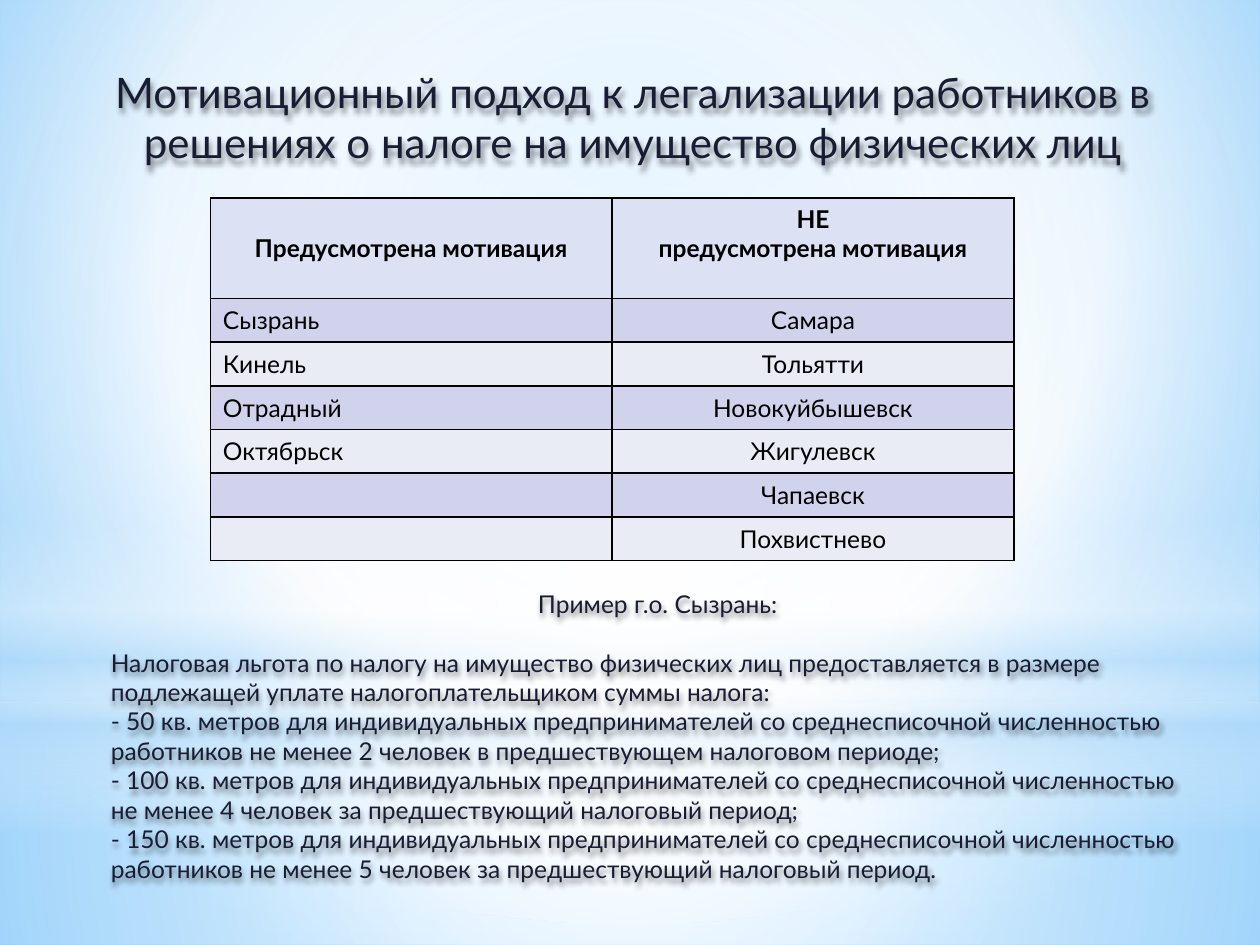
from itertools import zip_longest

from lxml.etree import SubElement
from pptx import Presentation
from pptx.dml.color import RGBColor
from pptx.enum.shapes import MSO_SHAPE
from pptx.enum.text import MSO_ANCHOR, MSO_AUTO_SIZE, PP_ALIGN
from pptx.oxml.ns import qn
from pptx.util import Cm, Pt

HUES = {
    "ink": "191D34", "black": "000000", "white": "FFFFFF",
    "head": "DCE1F4", "odd": "D0D3EB", "even": "E9EBF5",
    "sky": "9ED5FF", "deep": "5BB9FF", "pale": "B4DCFA",
}
FONT = "Lato"
WIDE, HIGH, SPLIT = 25.4, 19.05, 14.17
MID = (50, 50, 50, 50)
BACK = [(0, "sky", 100), (60, "white", 100), (100, "deep", 100)]
GLOWS = [
    (MSO_SHAPE.RECTANGLE, (0, SPLIT, WIDE, HIGH - SPLIT), MID,
     [(0, "white", 91), (37, "white", 76), (100, "pale", 79)]),
    (MSO_SHAPE.RECTANGLE, (0, 0, WIDE, SPLIT), MID,
     [(0, "white", 89), (48, "white", 62), (100, "pale", 79)]),
    (MSO_SHAPE.RECTANGLE, (0, 10.46, WIDE, 6.35), None,
     [(0, "white", 0), (29, "white", 30), (45, "pale", 40),
      (55, "white", 26), (65, "pale", 60), (100, "white", 0)]),
    (MSO_SHAPE.OVAL, (0, 4.45, WIDE, SPLIT), MID,
     [(0, "white", 100), (56, "white", 0)]),
]
TITLE = ("Мотивационный подход к легализации работников в решениях "
         "о налоге на имущество физических лиц")
HEADS = ["Предусмотрена мотивация", "НЕ\nпредусмотрена мотивация"]
WITH = ["Сызрань", "Кинель", "Отрадный", "Октябрьск"]
NONE = ["Самара", "Тольятти", "Новокуйбышевск", "Жигулевск", "Чапаевск",
        "Похвистнево"]
NOTES = [
    "Пример г.о. Сызрань:",
    "Налоговая льгота по налогу на имущество физических лиц предоставляется "
    "в размере подлежащей уплате налогоплательщиком суммы налога:",
    "- 50 кв. метров для индивидуальных предпринимателей со среднесписочной "
    "численностью работников не менее 2 человек в предшествующем налоговом "
    "периоде;",
    "- 100 кв. метров для индивидуальных предпринимателей со среднесписочной "
    "численностью не менее 4 человек за предшествующий налоговый период;",
    "- 150 кв. метров для индивидуальных предпринимателей со среднесписочной "
    "численностью работников не менее 5 человек за предшествующий налоговый "
    "период.",
]


def tint(node, hue, clear):
    """Add a colour with its opacity in percent to an XML node."""
    color = SubElement(node, qn("a:srgbClr"), val=HUES[hue])
    SubElement(color, qn("a:alpha"), val=str(clear * 1000))


def blend(fill, root, stops, rect):
    """Give a fill a round gradient, or a vertical one when rect is None."""
    fill.gradient()
    grad = root.find(".//" + qn("a:gradFill"))
    for child in list(grad):
        grad.remove(child)
    row = SubElement(grad, qn("a:gsLst"))
    for place, hue, clear in stops:
        tint(SubElement(row, qn("a:gs"), pos=str(place * 1000)), hue, clear)
    if rect is None:
        SubElement(grad, qn("a:lin"), ang="5400000", scaled="0")
    else:
        way = SubElement(grad, qn("a:path"), path="circle")
        sides = {side: str(v * 1000) for side, v in zip("ltrb", rect)}
        SubElement(way, qn("a:fillToRect"), **sides)


def style(para, size, hue, align, bold=False):
    """Format one paragraph and its runs."""
    para.alignment = align
    para.line_spacing = 1.0
    para.space_before = para.space_after = Pt(0)
    for run in para.runs:
        font = run.font
        font.name, font.size, font.bold = FONT, Pt(size), bold
        font.color.rgb = RGBColor.from_string(HUES[hue])


def scene(slide):
    """Paint the background and the soft glows behind everything."""
    blend(slide.background.fill, slide.element, BACK, (20, 10, 20, 60))
    tree = slide.shapes.element
    for rank, (kind, box, rect, stops) in enumerate(GLOWS):
        glow = slide.shapes.add_shape(kind, *map(Cm, box))
        glow.shadow.inherit = False
        glow.line.fill.background()
        blend(glow.fill, glow.element, stops, rect)
        tree.insert(2 + rank, glow.element)


def place(holder, box):
    """Move a placeholder into its box and give its text a soft shadow."""
    holder.left, holder.top, holder.width, holder.height = map(Cm, box)
    frame = holder.text_frame
    frame.word_wrap = True
    frame.auto_size = MSO_AUTO_SIZE.NONE
    frame.vertical_anchor = MSO_ANCHOR.MIDDLE
    holder.shadow.inherit = False
    effects = holder.element.spPr.find(qn("a:effectLst"))
    shade = SubElement(effects, qn("a:outerShdw"), blurRad="38100",
                       dist="38100", dir="4200000", algn="tl", rotWithShape="0")
    tint(shade, "black", 45)
    return frame


def title(slide, box):
    """Fill the title placeholder."""
    frame = place(slide.shapes.title, box)
    frame.text = TITLE
    style(frame.paragraphs[0], 24, "ink", PP_ALIGN.CENTER)


def edge(cell):
    """Draw thin black borders round a cell."""
    props = cell._tc.get_or_add_tcPr()
    for rank, side in enumerate("LRTB"):
        line = SubElement(props, qn("a:ln" + side), w="12700")
        tint(SubElement(line, qn("a:solidFill")), "black", 100)
        props.insert(rank, line)


def cities(slide, box, head, step):
    """Build the table of cities with and without the incentive."""
    rows = [HEADS, *zip_longest(WITH, NONE, fillvalue="")]
    grid = slide.shapes.add_table(len(rows), 2, *map(Cm, box)).table
    for col in grid.columns:
        col.width = Cm(box[2] / 2)
    for r, texts in enumerate(rows):
        grid.rows[r].height = Cm(step if r else head)
        hue = ("even", "odd")[r % 2] if r else "head"
        for c, text in enumerate(texts):
            cell = grid.cell(r, c)
            cell.margin_top = cell.margin_bottom = Cm(0)
            cell.vertical_anchor = MSO_ANCHOR.MIDDLE
            cell.fill.solid()
            cell.fill.fore_color.rgb = RGBColor.from_string(HUES[hue])
            edge(cell)
            cell.text_frame.text = text
            align = PP_ALIGN.LEFT if r and c == 0 else PP_ALIGN.CENTER
            for para in cell.text_frame.paragraphs:
                style(para, 14, "black", align, r == 0)
    last = grid.cell(0, 1)
    last.vertical_anchor = MSO_ANCHOR.TOP
    last.margin_top = Cm(0.13)


def notes(slide, box):
    """Fill the body placeholder with the worked example."""
    frame = place(slide.placeholders[1], box)
    frame.text = "\n".join(NOTES)
    for rank, para in enumerate(frame.paragraphs):
        style(para, 14, "ink", PP_ALIGN.LEFT if rank else PP_ALIGN.CENTER)
        props = para._p.get_or_add_pPr()
        props.set("marL", "0")
        props.set("indent", "0")
        SubElement(props, qn("a:buNone"))
    frame.paragraphs[0].space_after = Pt(16.8)


def main():
    """Build the slide and save it."""
    deck = Presentation()
    deck.slide_width, deck.slide_height = Cm(WIDE), Cm(HIGH)
    slide = deck.slides.add_slide(deck.slide_layouts[1])
    scene(slide)
    title(slide, (1.47, 1.07, 22.56, 2.57))
    cities(slide, (4.24, 3.99, 16.2, 7.29), 2.03, 0.88)
    notes(slide, (1.98, 11.71, 22.56, 6.25))
    deck.save("out.pptx")


if __name__ == "__main__":
    main()
